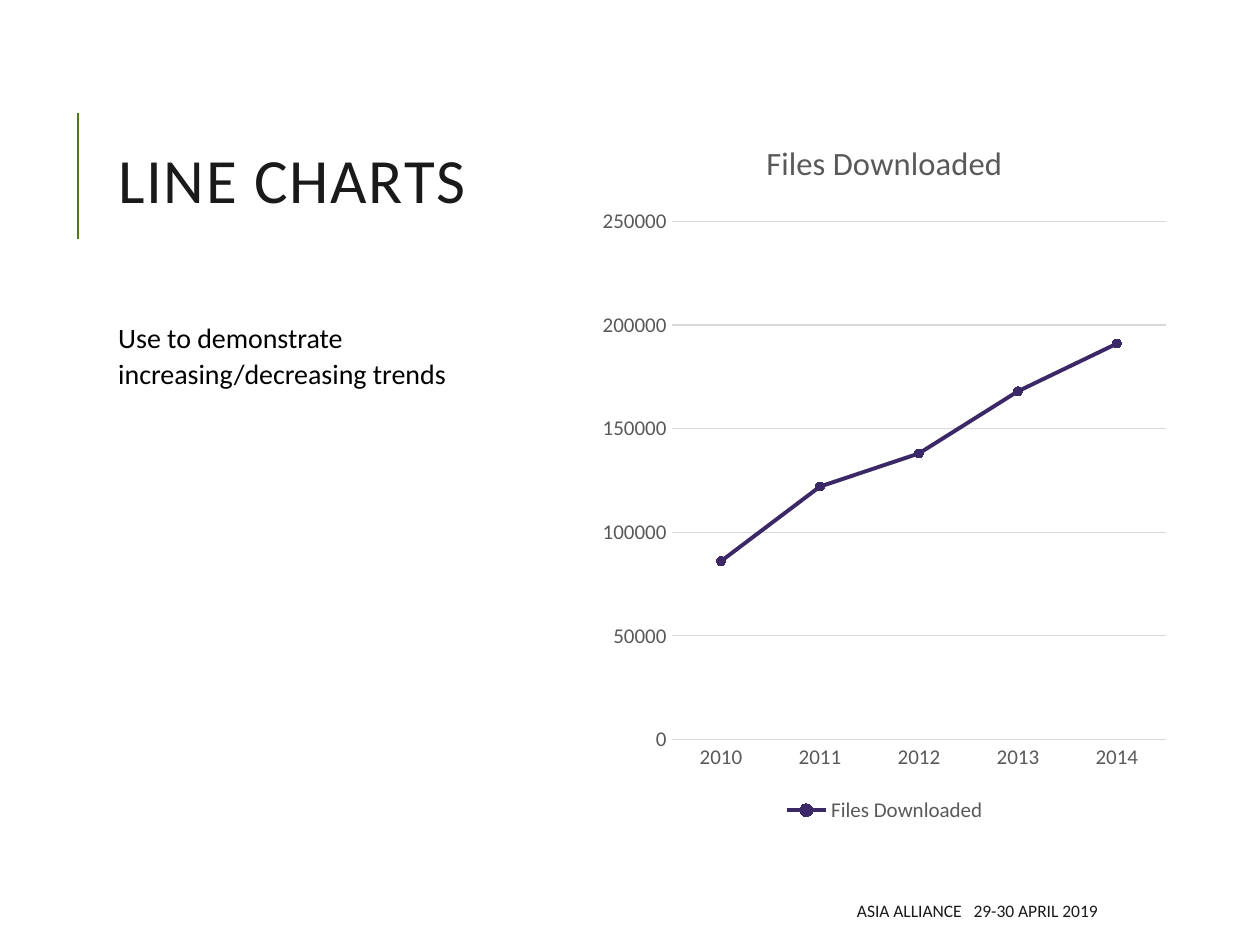
"""Builds a slide on line charts with a title, a note, a chart and a footer."""
from lxml import etree
from pptx import Presentation
from pptx.chart.data import CategoryChartData
from pptx.dml.color import RGBColor
from pptx.enum.chart import XL_CHART_TYPE, XL_LEGEND_POSITION, XL_MARKER_STYLE, XL_TICK_MARK
from pptx.enum.shapes import MSO_CONNECTOR
from pptx.enum.text import MSO_ANCHOR, PP_ALIGN
from pptx.oxml.ns import qn
from pptx.util import Inches, Pt

LINE_MARKERS = XL_CHART_TYPE.LINE_MARKERS
BOTTOM = XL_LEGEND_POSITION.BOTTOM
CIRCLE = XL_MARKER_STYLE.CIRCLE
NO_TICK = XL_TICK_MARK.NONE
STRAIGHT = MSO_CONNECTOR.STRAIGHT
TOP, MIDDLE = MSO_ANCHOR.TOP, MSO_ANCHOR.MIDDLE
LEFT, RIGHT = PP_ALIGN.LEFT, PP_ALIGN.RIGHT

FONT = "Calibri"
COLORS = {
    "heading": "1A1A1A",
    "body": "000000",
    "label": "595959",
    "grid": "D9D9D9",
    "series": "3B2867",
    "accent": "4E7817",
}
COLUMNS, ROWS = 100, 75
TEXT_LEFT, TEXT_WIDTH = 8.4, 36
SERIES_NAME = "Files Downloaded"
DOWNLOADS = {"2010": 86000, "2011": 122000, "2012": 138000, "2013": 168000, "2014": 191000}


def cells(*lengths):
    """Turn alternating column and row counts into slide lengths."""
    units = (Inches(10) / COLUMNS, Inches(7.5) / ROWS)
    return [round(length * units[index % 2]) for index, length in enumerate(lengths)]


def color(name):
    """Return a named colour."""
    return RGBColor.from_string(COLORS[name])


def style_font(font, size, name):
    """Set the typeface, size and colour of a font."""
    font.name, font.size, font.bold = FONT, Pt(size), False
    font.color.rgb = color(name)


def style_line(line, name, width):
    """Set the colour and width of a line."""
    line.color.rgb = color(name)
    line.width = Pt(width)


def add_text(page, place, spans, size, name, anchor=TOP, align=LEFT, **spacing):
    """Add a one-paragraph text box from pairs of text and letter spacing."""
    frame = page.shapes.add_textbox(*cells(*place)).text_frame
    frame.word_wrap = True
    frame.vertical_anchor = anchor
    para = frame.paragraphs[0]
    para.alignment = align
    for key, value in spacing.items():
        setattr(para, key, value)
    for text, tracking in spans:
        span = para.add_run()
        span.text = text
        style_font(span.font, size, name)
        if tracking:
            span.font._element.set("spc", str(tracking))


def add_rule(page, start, end):
    """Add the accent line beside the title."""
    rule = page.shapes.add_connector(STRAIGHT, *cells(*start, *end))
    style_line(rule.line, "accent", 1.5)
    etree.SubElement(rule._element.spPr, qn("a:effectLst"))


def style_axes(chart):
    """Format the category axis, the value axis and its gridlines."""
    for axis in (chart.category_axis, chart.value_axis):
        axis.major_tick_mark = axis.minor_tick_mark = NO_TICK
        style_font(axis.tick_labels.font, 12, "label")
    style_line(chart.category_axis.format.line, "grid", 0.75)
    values = chart.value_axis
    values.minimum_scale, values.maximum_scale, values.major_unit = 0, 250000, 50000
    values.format.line.fill.background()
    style_line(values.major_gridlines.format.line, "grid", 0.75)


def style_series(series):
    """Format the line and its round markers."""
    series.smooth = False
    style_line(series.format.line, "series", 2.25)
    marker = series.marker
    marker.style, marker.size = CIRCLE, 5
    marker.format.fill.solid()
    marker.format.fill.fore_color.rgb = color("series")
    style_line(marker.format.line, "series", 0.75)


def add_line_chart(page, place):
    """Add the chart of yearly downloads."""
    data = CategoryChartData()
    data.categories = list(DOWNLOADS)
    data.add_series(SERIES_NAME, list(DOWNLOADS.values()))
    chart = page.shapes.add_chart(LINE_MARKERS, *cells(*place), data).chart
    style_font(chart.font, 10, "body")
    chart.has_title = True
    span = chart.chart_title.text_frame.paragraphs[0].add_run()
    span.text = SERIES_NAME
    style_font(span.font, 18.6, "label")
    chart.chart_title.include_in_layout = False
    chart.has_legend = True
    chart.legend.position = BOTTOM
    chart.legend.include_in_layout = False
    style_font(chart.legend.font, 12, "label")
    chart.plots[0].vary_by_categories = False
    style_axes(chart)
    style_series(chart.series[0])


def main():
    """Build and save the slide."""
    deck = Presentation()
    deck.slide_width, deck.slide_height = Inches(10), Inches(7.5)
    page = deck.slides.add_slide(deck.slide_layouts[6])
    add_rule(page, (6.2, 19), (6.2, 9))
    add_text(page, (TEXT_LEFT, 5.2, TEXT_WIDTH, 19), [("LINE CHARTS", 100)], 36, "heading",
             anchor=MIDDLE, line_spacing=0.8)
    add_line_chart(page, (46.9, 9, 46.6, 56.7))
    add_text(page, (TEXT_LEFT, 24.7, TEXT_WIDTH, 41.1),
             [("Use to demonstrate increasing/decreasing trends", 0)], 16, "body",
             line_spacing=1.08, space_before=Pt(6), space_after=Pt(2))
    add_text(page, (39.7, 70.8, 48.4, 3),
             [("ASIA ALLIANCE", 0), (" ", 450), ("29-30 APRIL 2019", 0)], 10, "heading",
             anchor=MIDDLE, align=RIGHT)
    deck.save("out.pptx")


if __name__ == "__main__":
    main()
